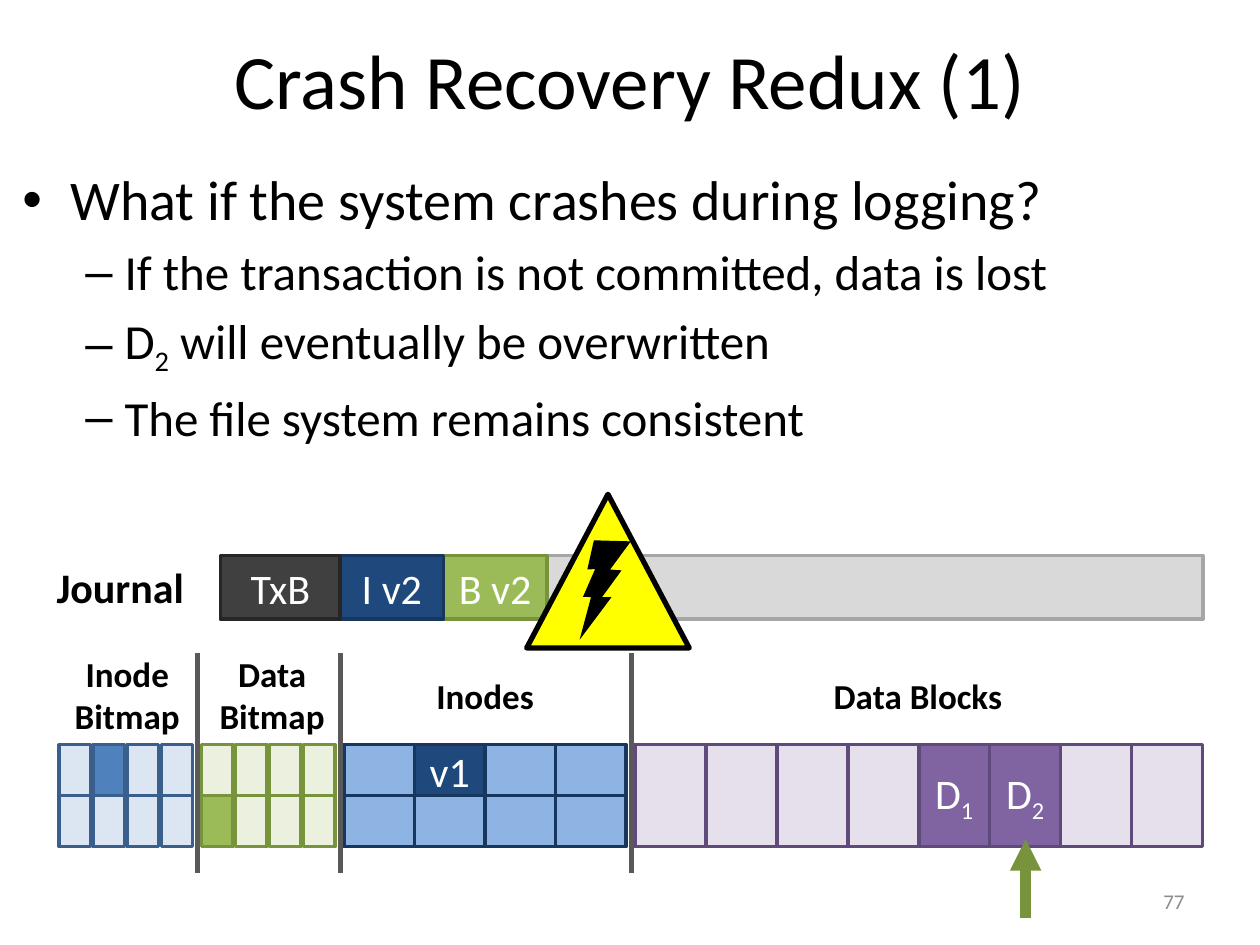
from dataclasses import dataclass, field

from lxml import etree
from pptx import Presentation
from pptx.dml.color import RGBColor
from pptx.enum.shapes import MSO_CONNECTOR, MSO_SHAPE
from pptx.enum.text import MSO_ANCHOR, PP_ALIGN
from pptx.oxml.ns import qn
from pptx.util import Inches, Pt

RECTANGLE = MSO_SHAPE.RECTANGLE
TRIANGLE = MSO_SHAPE.ISOSCELES_TRIANGLE
BOLT = MSO_SHAPE.LIGHTNING_BOLT
STRAIGHT = MSO_CONNECTOR.STRAIGHT
LEFT, CENTER, RIGHT = PP_ALIGN.LEFT, PP_ALIGN.CENTER, PP_ALIGN.RIGHT
TOP, MIDDLE = MSO_ANCHOR.TOP, MSO_ANCHOR.MIDDLE

WIDTH, HEIGHT = Inches(10), Inches(7.5)


@dataclass(frozen=True)
class Theme:
    font: str = "Calibri"
    black: str = "000000"
    white: str = "FFFFFF"
    muted: str = "8C8C8C"
    divider: str = "595959"
    warning: str = "FFFF00"
    green: str = "9BBB59"
    green_line: str = "77933C"
    navy: str = "1F497D"
    navy_line: str = "17375E"
    title: int = 44
    body: int = 32
    sub_body: int = 28
    cell: int = 24
    heading: int = 20
    footer: int = 12


THEME = Theme()


@dataclass(frozen=True)
class Box:
    """An area in percent of the slide's width and height."""
    left: float
    top: float
    width: float
    height: float

    def lengths(self) -> tuple[int, int, int, int]:
        return across(self.left), down(self.top), across(self.width), down(self.height)


@dataclass(frozen=True)
class Label:
    text: str  # one line per paragraph, "_" lowers the next character
    box: Box
    size: int
    bold: bool = False
    color: str = THEME.black
    align: PP_ALIGN = CENTER
    anchor: MSO_ANCHOR = TOP
    wrap: bool = False


@dataclass(frozen=True)
class Block:
    box: Box
    fill: str
    line: str
    text: str = ""


@dataclass(frozen=True)
class Bank:
    """A grid of disk blocks; used maps (row, column) to a label."""
    left: float
    pitch: float
    cell_width: float
    columns: int
    rows: int
    free_fill: str
    used_fill: str
    line: str
    used: dict[tuple[int, int], str] = field(default_factory=dict)


def across(percent: float) -> int:
    return round(WIDTH * percent / 100)


def down(percent: float) -> int:
    return round(HEIGHT * percent / 100)


def write(paragraph, text: str, size: int, color: str, bold: bool = False) -> None:
    first, *lowered = text.split("_")
    pieces = [(first, False)]
    for part in lowered:
        pieces += [(part[0], True), (part[1:], False)]
    for piece, is_subscript in pieces:
        if not piece:
            continue
        run = paragraph.add_run()
        run.text = piece
        for name, value in {"name": THEME.font, "size": Pt(size), "bold": bold}.items():
            setattr(run.font, name, value)
        run.font.color.rgb = RGBColor.from_string(color)
        if is_subscript:
            run.font._element.set("baseline", "-25000")


def add_label(slide, label: Label) -> None:
    frame = slide.shapes.add_textbox(*label.box.lengths()).text_frame
    frame.word_wrap, frame.vertical_anchor = label.wrap, label.anchor
    for index, text in enumerate(label.text.split("\n")):
        paragraph = frame.add_paragraph() if index else frame.paragraphs[0]
        paragraph.alignment = label.align
        write(paragraph, text, label.size, label.color, label.bold)


def add_bullets(slide, box: Box, items: list[tuple[int, str]]) -> None:
    frame = slide.shapes.add_textbox(*box.lengths()).text_frame
    frame.word_wrap = True
    styles = [("•", THEME.body, 0.38, 0.38), ("–", THEME.sub_body, 0.81, 0.31)]
    for index, (level, text) in enumerate(items):
        bullet, size, margin, hanging = styles[level]
        paragraph = frame.add_paragraph() if index else frame.paragraphs[0]
        paragraph.level, paragraph.space_before = level, Pt(size * 0.2)
        properties = paragraph._p.get_or_add_pPr()
        properties.set("marL", str(Inches(margin)))
        properties.set("indent", str(-Inches(hanging)))
        etree.SubElement(properties, qn("a:buFont"), typeface="Arial")
        etree.SubElement(properties, qn("a:buChar"), char=bullet)
        write(paragraph, text, size, THEME.black)


def add_block(slide, block: Block, kind=RECTANGLE, line_width: float = 2):
    shape = slide.shapes.add_shape(kind, *block.box.lengths())
    shape.shadow.inherit = False
    shape.fill.solid()
    shape.fill.fore_color.rgb = RGBColor.from_string(block.fill)
    if line_width:
        shape.line.color.rgb = RGBColor.from_string(block.line)
        shape.line.width = Pt(line_width)
    else:
        shape.line.fill.background()
    if block.text:
        frame = shape.text_frame
        for name in ("margin_left", "margin_right", "margin_top", "margin_bottom"):
            setattr(frame, name, 0)
        frame.vertical_anchor = MIDDLE
        frame.paragraphs[0].alignment = CENTER
        write(frame.paragraphs[0], block.text, THEME.cell, THEME.white)
    return shape


def add_bank(slide, bank: Bank, top: float = 78.8, height: float = 10.8) -> None:
    row_height = height / bank.rows
    for row in range(bank.rows):
        for column in range(bank.columns):
            fill = bank.used_fill if (row, column) in bank.used else bank.free_fill
            box = Box(bank.left + column * bank.pitch, top + row * row_height,
                      bank.cell_width, row_height)
            add_block(slide, Block(box, fill, bank.line, bank.used.get((row, column), "")))


def add_line(slide, x: float, start: float, end: float, color: str, width: float,
             arrow: bool = False) -> None:
    line = slide.shapes.add_connector(STRAIGHT, across(x), down(start), across(x), down(end))
    line.line.color.rgb = RGBColor.from_string(color)
    line.line.width = Pt(width)
    if arrow:
        etree.SubElement(line.line._get_or_add_ln(), qn("a:tailEnd"), type="triangle")
    etree.SubElement(line._element.spPr, qn("a:effectLst"))


def main() -> None:
    presentation = Presentation()
    presentation.slide_width, presentation.slide_height = WIDTH, HEIGHT
    slide = presentation.slides.add_slide(presentation.slide_layouts[6])

    # Title, bullets and page number
    add_label(slide, Label("Crash Recovery Redux (1)", Box(5, 0, 90, 16.67), THEME.title,
                           anchor=MIDDLE, wrap=True))
    add_bullets(slide, Box(0.8, 16.8, 98.5, 35.5), [
        (0, "What if the system crashes during logging?"),
        (1, "If the transaction is not committed, data is lost"),
        (1, "D_2 will eventually be overwritten"),
        (1, "The file system remains consistent"),
    ])
    add_label(slide, Label("77", Box(71.7, 92.67, 23.3, 5.33), THEME.footer,
                           color=THEME.muted, align=RIGHT, anchor=MIDDLE, wrap=True))

    # Journal with its logged entries
    journal_top, journal_height = 58.8, 6.73
    for left, width, fill, line, text in [
        (17.5, 78, "D9D9D9", "A6A6A6", ""),
        (35.2, 8.2, THEME.green, THEME.green_line, "B v2"),
        (27, 8.2, THEME.navy, THEME.navy_line, "I v2"),
        (17.5, 9.5, "404040", "262626", "TxB"),
    ]:
        box = Box(left, journal_top, width, journal_height)
        add_block(slide, Block(box, fill, line, text))
    add_label(slide, Label("Journal", Box(3.5, journal_top, 12.2, journal_height),
                           THEME.cell, bold=True, align=LEFT))

    # Disk regions
    for bank in [
        Bank(4.7, 2.7, 2.5, 4, 2, "DCE6F2", "4F81BD", "3A5F8C", {(0, 1): ""}),
        Bank(16, 2.7, 2.5, 4, 2, "EBF1DE", THEME.green, THEME.green_line, {(1, 0): ""}),
        Bank(27.3, 5.6, 5.6, 4, 2, "8EB4E3", THEME.navy, THEME.navy_line, {(0, 1): "v1"}),
        Bank(50.4, 5.63, 5.63, 8, 1, "E6E0EC", "8064A2", "604A7B",
             {(0, 4): "D_1", (0, 5): "D_2"}),
    ]:
        add_bank(slide, bank)

    # Region headings and dividers
    for text, box in [
        ("Inode\nBitmap", Box(4.9, 68.4, 10.4, 10.3)),
        ("Data\nBitmap", Box(16.4, 68.4, 10.4, 10.3)),
        ("Inodes", Box(33.6, 70.7, 9.8, 5.8)),
        ("Data Blocks", Box(65.1, 70.7, 15.5, 5.8)),
    ]:
        add_label(slide, Label(text, box, THEME.heading, bold=True))
    for x in (15.7, 27, 50.1):
        add_line(slide, x, 69.1, 92.4, THEME.divider, 3)

    # Crash warning sign
    add_block(slide, Block(Box(41.8, 52.3, 12.9, 16.27), THEME.warning, THEME.black),
              TRIANGLE, 3)
    bolt = add_block(slide, Block(Box(44.4, 57.2, 6.8, 9.07), THEME.black, THEME.black), BOLT, 0)
    bolt.rotation = 336.9
    bolt._element.spPr.find(qn("a:xfrm")).set("flipH", "1")

    # Pointer to the block that will be overwritten
    add_line(slide, 81.4, 97.1, 88.8, THEME.green_line, 6, arrow=True)

    presentation.save("out.pptx")


if __name__ == "__main__":
    main()
